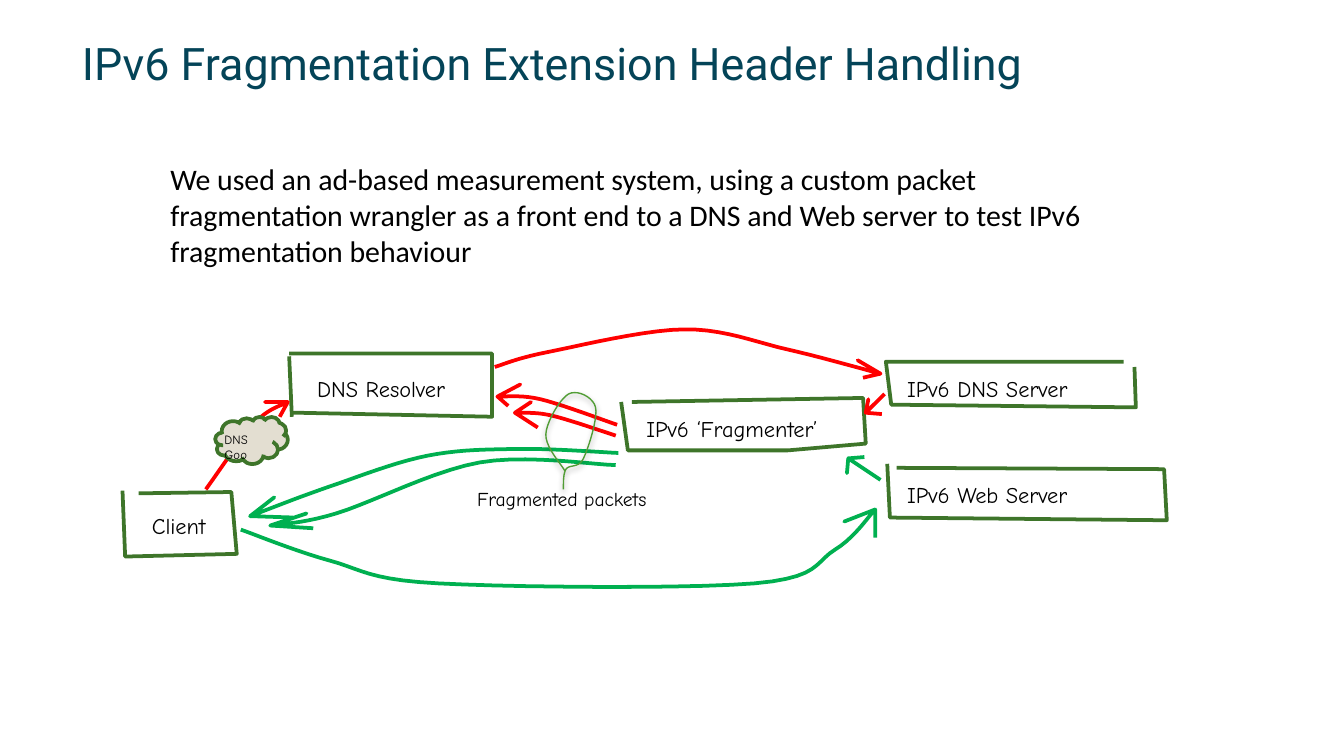
from lxml import etree
from pptx import Presentation
from pptx.dml.color import RGBColor
from pptx.enum.shapes import MSO_SHAPE
from pptx.enum.text import MSO_AUTO_SIZE
from pptx.oxml.ns import qn
from pptx.util import Cm, Pt

CLOUD = MSO_SHAPE.CLOUD
FIT_TEXT = MSO_AUTO_SIZE.SHAPE_TO_FIT_TEXT

BOX_GREEN, LOOP_GREEN = "3E752A", "519D35"
DNS_RED, WEB_GREEN = "FF0000", "00B050"
HAND_FONT = "Comic Neue"
UNIT = Cm(2.54) / 100  # drawing grid
CURVE_STEPS = 10

# Corners of the hand-drawn host outlines, on the drawing grid
CLIENT = [(1, 125), (3, 174), (86, 172), (82, 126), (13, 127)]
RESOLVER_SIDE = [(125, 25), (127, 70)]
RESOLVER = [(128, 67), (276, 70), (276, 23), (125, 23)]
FRAGMENTER = [(372, 59), (377, 95), (496, 95), (554, 90), (552, 56), (380, 59)]
DNS_SERVER = [(746, 29), (569, 29), (573, 61), (755, 63), (754, 33)]
WEB_SERVER = [(570, 105), (572, 145), (778, 147), (776, 109), (577, 108)]
HOSTS = (CLIENT, RESOLVER_SIDE, RESOLVER, FRAGMENTER, DNS_SERVER, WEB_SERVER)

# Arrows: points the shaft runs through, then the two ends of the head
CLIENT_TO_RESOLVER = ([(63, 124), (100, 74), (124, 59)],
                      (107, 59), (118, 70))
DNS_ARROWS = [
    ([(278, 33), (317, 22), (419, 5), (496, 20), (565, 38)],
     (548, 28), (552, 41)),
    ([(568, 53), (554, 67)], (556, 57), (566, 68)),
    ([(369, 76), (312, 57), (280, 55)], (297, 46), (288, 62)),
    ([(368, 84), (320, 69), (293, 67)], (305, 59), (310, 78)),
]
WEB_ARROWS = [
    ([(89, 154), (155, 177), (236, 194), (471, 194), (531, 169), (561, 139)],
     (538, 148), (561, 160)),
    ([(565, 117), (541, 101)], (540, 112), (553, 100)),
    ([(370, 97), (297, 94), (228, 99), (155, 122), (96, 144)],
     (114, 130), (128, 145)),
    ([(368, 106), (267, 104), (160, 142), (111, 151)],
     (138, 142), (143, 153)),
]
FRAGMENT_LOOP = [(329, 124), (331, 109), (344, 101), (353, 63),
                 (333, 53), (316, 83), (330, 110)]

# Text, left and top on the drawing grid, size in points
LABELS = [
    ("Client", 13, 136, 12),
    ("DNS Resolver", 136, 34, 12),
    ("IPv6 DNS Server", 575, 34, 12),
    ("IPv6 Web Server", 575, 113, 12),
    ("IPv6 ‘Fragmenter’", 381, 64, 12),
    ("DNS Goo", 67, 76, 6.8),
    ("Fragmented packets", 255, 117, 10.5),
]


def rgb(hex_string):
    return RGBColor.from_string(hex_string)


def add_text(slide, box, text, size, font, color="000000", wrap=False):
    frame = slide.shapes.add_textbox(*box).text_frame
    frame.word_wrap = wrap
    frame.auto_size = FIT_TEXT
    frame.text = text
    run_font = frame.paragraphs[0].runs[0].font
    run_font.size, run_font.name = Pt(size), font
    run_font.color.rgb = rgb(color)


def smooth(knots):
    """Points of a Catmull-Rom curve through the knots."""
    points = [knots[0]]
    padded = [knots[0], *knots, knots[-1]]
    for a, b, c, d in zip(padded, padded[1:], padded[2:], padded[3:]):
        for step in range(1, CURVE_STEPS + 1):
            t = step / CURVE_STEPS
            points.append(tuple(
                q + t * (r - p + t * (2 * p - 5 * q + 4 * r - s
                                      + t * (3 * (q - r) + s - p))) / 2
                for p, q, r, s in zip(a, b, c, d)))
    return points


def add_stroke(slide, box, points, color, width=2):
    start, *rest = [(round(x * UNIT), round(y * UNIT)) for x, y in points]
    builder = slide.shapes.build_freeform(*start)
    builder.add_line_segments(rest, close=False)
    stroke = builder.convert_to_shape(*box[:2])
    stroke.fill.background()
    stroke.line.color.rgb = rgb(color)
    stroke.line.width = Pt(width)
    stroke.shadow.inherit = False
    return stroke


def add_arrow(slide, box, arrow, color):
    shaft, first_barb, second_barb = arrow
    head = [first_barb, shaft[-1], second_barb]
    add_stroke(slide, box, smooth(shaft) + head, color)


def add_soft_shadow(shape):
    effects = shape.element.spPr.find(qn("a:effectLst"))
    shadow = etree.SubElement(
        effects, qn("a:outerShdw"), blurRad=str(Pt(3)), dist=str(Pt(1.8)),
        dir="5400000", rotWithShape="0")
    black = etree.SubElement(shadow, qn("a:srgbClr"), val="000000")
    etree.SubElement(black, qn("a:alpha"), val="35000")


def add_cloud(slide, box):
    left, top = box[:2]
    cloud = slide.shapes.add_shape(
        CLOUD, left + Cm(1.78), top + Cm(1.78), Cm(1.37), Cm(0.89))
    cloud.shadow.inherit = False
    cloud.fill.solid()
    cloud.fill.fore_color.rgb = rgb("E3DED1")
    cloud.line.color.rgb = rgb(BOX_GREEN)
    cloud.line.width = Pt(2)


def add_diagram(slide, box):
    left, top = box[:2]
    # Hosts, then the cloud over the first DNS arrow
    for outline in HOSTS:
        add_stroke(slide, box, outline, BOX_GREEN)
    add_arrow(slide, box, CLIENT_TO_RESOLVER, DNS_RED)
    add_cloud(slide, box)
    # Traffic
    for arrows, color in ((DNS_ARROWS, DNS_RED), (WEB_ARROWS, WEB_GREEN)):
        for arrow in arrows:
            add_arrow(slide, box, arrow, color)
    # Labels, sized by their text
    for text, x, y, size in LABELS:
        label_box = (left + round(x * UNIT), top + round(y * UNIT),
                     Cm(0.3 * len(text) * size / 12), Cm(0.06 * size))
        add_text(slide, label_box, text, size, HAND_FONT)
    # Loop around the fragmented packets
    loop = add_stroke(slide, box, smooth(FRAGMENT_LOOP), LOOP_GREEN, 0.75)
    add_soft_shadow(loop)


def main():
    prs = Presentation()
    prs.slide_width, prs.slide_height = Cm(25.4), Cm(14.29)
    slide = prs.slides.add_slide(prs.slide_layouts[6])
    # Title and introduction
    add_text(slide, (Cm(1.3), Cm(0.56), Cm(23.55), Cm(1.27)),
             "IPv6 Fragmentation Extension Header Handling",
             24, "Roboto", "044458")
    add_text(slide, (Cm(2.97), Cm(2.92), Cm(18.52), Cm(2.31)),
             "We used an ad-based measurement system, using a custom packet "
             "fragmentation wrangler as a front end to a DNS and Web server "
             "to test IPv6 fragmentation behaviour", 16, "Calibri", wrap=True)
    add_diagram(slide, (Cm(2.29), Cm(6.1), Cm(19.8), Cm(5.1)))
    prs.save("out.pptx")


if __name__ == "__main__":
    main()
